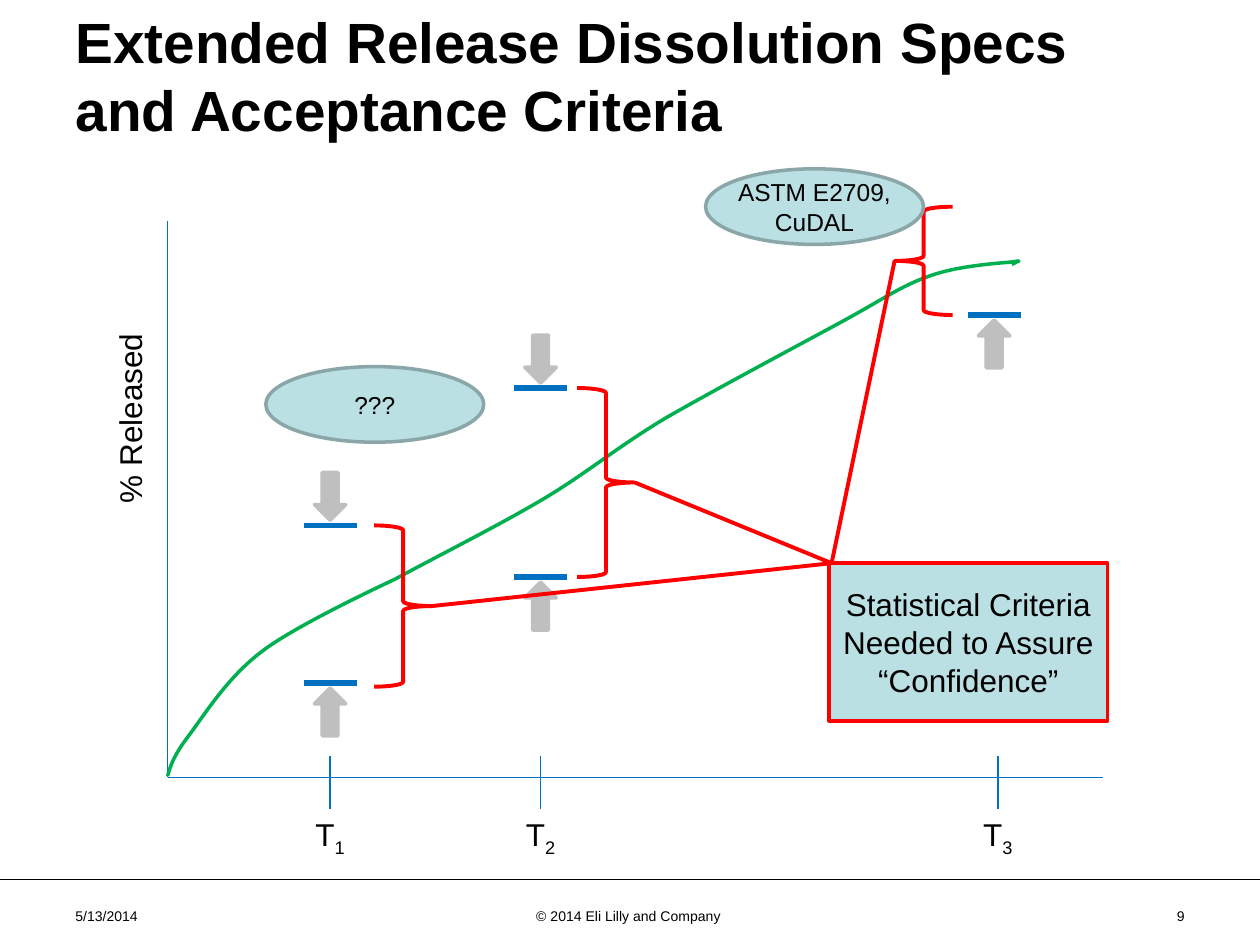
from dataclasses import dataclass

from lxml import etree
from pptx import Presentation
from pptx.dml.color import RGBColor
from pptx.enum import shapes, text
from pptx.oxml import ns
from pptx.util import Inches, Pt

SHAPE = shapes.MSO_SHAPE
ALIGN = text.PP_ALIGN


@dataclass(frozen=True)
class Theme:
    font: str = "Arial"
    black: str = "000000"
    axis: str = "0070C0"
    profile: str = "00B050"
    arrow: str = "BFBFBF"
    alert: str = "FF0000"
    panel: str = "BBE0E3"
    panel_edge: str = "8AA6A8"
    title: float = 32.4
    body: float = 18
    note: float = 14
    footer: float = 8


THEME = Theme()

# Plot geometry in inches
ORIGIN_X, ORIGIN_Y = 1.33, 6.17
TIMES = [2.62, 4.29, 7.92]
# Centre, height and direction of the arrow for each limit
LIMITS = [(2.62, 4.17, "down"), (2.62, 5.42, "up"),
          (4.29, 3.08, "down"), (4.29, 4.58, "up"), (7.89, 2.5, "up")]
# Left, top, height, rotation and tip of each acceptance range
RANGES = [(2.97, 4.17, 1.28, 0, (3.43, 4.81)),
          (4.58, 3.08, 1.5, 0, (5.04, 3.83)),
          (7.1, 1.64, 0.86, 180, (7.1, 2.07))]
CRITERIA_CORNER = (6.6, 4.47)
# Start point, then two controls and an end point for each curve
PROFILE = [(1.33, 6.16),
           (1.35, 6.09), (1.37, 6.01), (1.49, 5.85),
           (1.62, 5.68), (1.8, 5.38), (2.08, 5.17),
           (2.35, 4.96), (3.13, 4.6), (3.13, 4.6),
           (3.5, 4.4), (3.92, 4.19), (4.28, 3.98),
           (4.64, 3.77), (4.88, 3.56), (5.28, 3.32),
           (5.68, 3.09), (6.32, 2.75), (6.67, 2.56),
           (7.02, 2.37), (7.15, 2.27), (7.38, 2.19),
           (7.6, 2.11), (7.92, 2.09), (8.03, 2.08),
           (8.15, 2.06), (8.05, 2.08), (8.05, 2.09),
           (8.05, 2.09), (8.03, 2.1), (8.03, 2.1)]


def rgb(color):
    return RGBColor.from_string(color)


def write(frame, words, size, align=ALIGN.LEFT, bold=False):
    frame.text = words
    frame.word_wrap = True
    paragraph = frame.paragraphs[0]
    paragraph.alignment = align
    for run in paragraph.runs:
        run.font.name = THEME.font
        run.font.size = Pt(size)
        run.font.bold = bold
        run.font.color.rgb = rgb(THEME.black)
    return paragraph


def add_label(slide, box, words, size, align=ALIGN.CENTER, rotation=0):
    label = slide.shapes.add_textbox(*map(Inches, box))
    label.rotation = rotation
    return write(label.text_frame, words, size, align)


def add_line(slide, start, end, color, width):
    line = slide.shapes.add_connector(
        shapes.MSO_CONNECTOR.STRAIGHT, *map(Inches, (*start, *end)))
    line.line.color.rgb = rgb(color)
    line.line.width = Pt(width)
    etree.SubElement(line._element.spPr, ns.qn("a:effectLst"))


def style(shape, fill, edge, width):
    shape.shadow.inherit = False
    if fill:
        shape.fill.solid()
        shape.fill.fore_color.rgb = rgb(fill)
    else:
        shape.fill.background()
    shape.line.color.rgb = rgb(edge)
    shape.line.width = Pt(width)


def add_shape(slide, kind, box, fill, edge, width, rotation=0):
    shape = slide.shapes.add_shape(kind, *map(Inches, box))
    shape.rotation = rotation
    style(shape, fill, edge, width)
    return shape


def add_panel(slide, kind, box, words, size, edge, width, side_inset):
    panel = add_shape(slide, kind, box, THEME.panel, edge, width)
    frame = panel.text_frame
    frame.margin_left = frame.margin_right = Inches(side_inset)
    frame.vertical_anchor = text.MSO_ANCHOR.MIDDLE
    write(frame, words, size, ALIGN.CENTER)


def add_limit(slide, x, y, direction):
    add_line(slide, (x - 0.21, y), (x + 0.21, y), THEME.axis, 3)
    offset, rotation = (-0.23, 90) if direction == "down" else (0.23, 270)
    width, height = 0.38, 0.25
    box = (x - width / 2, y + offset - height / 2, width, height)
    add_shape(slide, SHAPE.RIGHT_ARROW, box, THEME.arrow, THEME.arrow, 2, rotation)


def add_profile(slide):
    start, *points = [(Inches(x), Inches(y)) for x, y in PROFILE]
    builder = slide.shapes.build_freeform(*start)
    builder.add_line_segments(points, close=False)
    curve = builder.convert_to_shape()
    style(curve, None, THEME.profile, 2)
    # Each three points become one Bezier segment
    segments = list(curve._element.iter(ns.qn("a:lnTo")))
    for i in range(0, len(segments), 3):
        bezier = etree.Element(ns.qn("a:cubicBezTo"))
        segments[i].addprevious(bezier)
        for segment in segments[i:i + 3]:
            bezier.append(segment[0])
            segment.getparent().remove(segment)


def add_title(slide):
    title = slide.shapes.title
    title.left, title.top, title.width, title.height = map(
        Inches, (0.5, -0.03, 9, 1.25))
    frame = title.text_frame
    frame.auto_size = text.MSO_AUTO_SIZE.NONE
    frame.vertical_anchor = text.MSO_ANCHOR.MIDDLE
    paragraph = write(
        frame, "Extended Release Dissolution Specs and Acceptance Criteria",
        THEME.title, bold=True)
    # Soft drop shadow behind the letters
    effects = etree.fromstring(
        f'<a:effectLst {ns.nsdecls("a")}><a:outerShdw blurRad="38100" '
        'dist="38100" dir="2700000" algn="tl"><a:srgbClr val="000000">'
        '<a:alpha val="43000"/></a:srgbClr></a:outerShdw></a:effectLst>')
    properties = paragraph.runs[0]._r.get_or_add_rPr()
    properties.find(ns.qn("a:solidFill")).addnext(effects)


def add_axes(slide):
    corner = (ORIGIN_X, ORIGIN_Y)
    for end in ((ORIGIN_X, 1.75), (8.75, ORIGIN_Y)):
        add_line(slide, corner, end, THEME.axis, 0.75)
    for number, x in enumerate(TIMES, 1):
        add_line(slide, (x, 6), (x, 6.42), THEME.axis, 0.75)
        label = add_label(slide, (x - 0.29, 6.42, 0.58, 0.4), "T", THEME.body)
        subscript = label.add_run()
        subscript.text = str(number)
        subscript.font.name = THEME.font
        subscript.font.size = Pt(THEME.body)
        subscript.font.color.rgb = rgb(THEME.black)
        subscript._r.get_or_add_rPr().set("baseline", "-25000")
    add_label(slide, (-0.12, 3.12, 2.3, 0.4), "% Released", THEME.body, rotation=270)


def add_footer(slide):
    add_line(slide, (0, 6.98), (10, 6.98), THEME.black, 0.5)
    for left, width, words, align in (
            (0.5, 2.33, "5/13/2014", ALIGN.LEFT),
            (3.42, 3.17, "© 2014 Eli Lilly and Company ", ALIGN.CENTER),
            (7.17, 2.33, "9", ALIGN.RIGHT)):
        add_label(slide, (left, 7.15, width, 0.25), words, THEME.footer, align)


def main():
    prs = Presentation()
    prs.slide_width, prs.slide_height = Inches(10), Inches(7.5)
    slide = prs.slides.add_slide(prs.slide_layouts[5])
    add_title(slide)
    add_footer(slide)

    # Release profile with its limits
    add_axes(slide)
    add_profile(slide)
    for limit in LIMITS:
        add_limit(slide, *limit)

    # Acceptance ranges, each led to the criteria panel
    for left, top, height, rotation, tip in RANGES:
        add_shape(slide, SHAPE.RIGHT_BRACE, (left, top, 0.46, height),
                  None, THEME.alert, 2.25, rotation)
        add_line(slide, tip, CRITERIA_CORNER, THEME.alert, 2.25)

    # Methods and criteria
    for left, top, words in ((5.6, 1.34, "ASTM E2709, CuDAL"), (2.11, 2.91, "???")):
        add_panel(slide, SHAPE.OVAL, (left, top, 1.73, 0.6), words,
                  THEME.note, THEME.panel_edge, 2, 0)
    add_panel(slide, SHAPE.RECTANGLE, (6.58, 4.47, 2.21, 1.25),
              "Statistical Criteria Needed to Assure “Confidence”",
              THEME.body, THEME.alert, 2.25, 0.1)
    prs.save("out.pptx")


if __name__ == "__main__":
    main()
